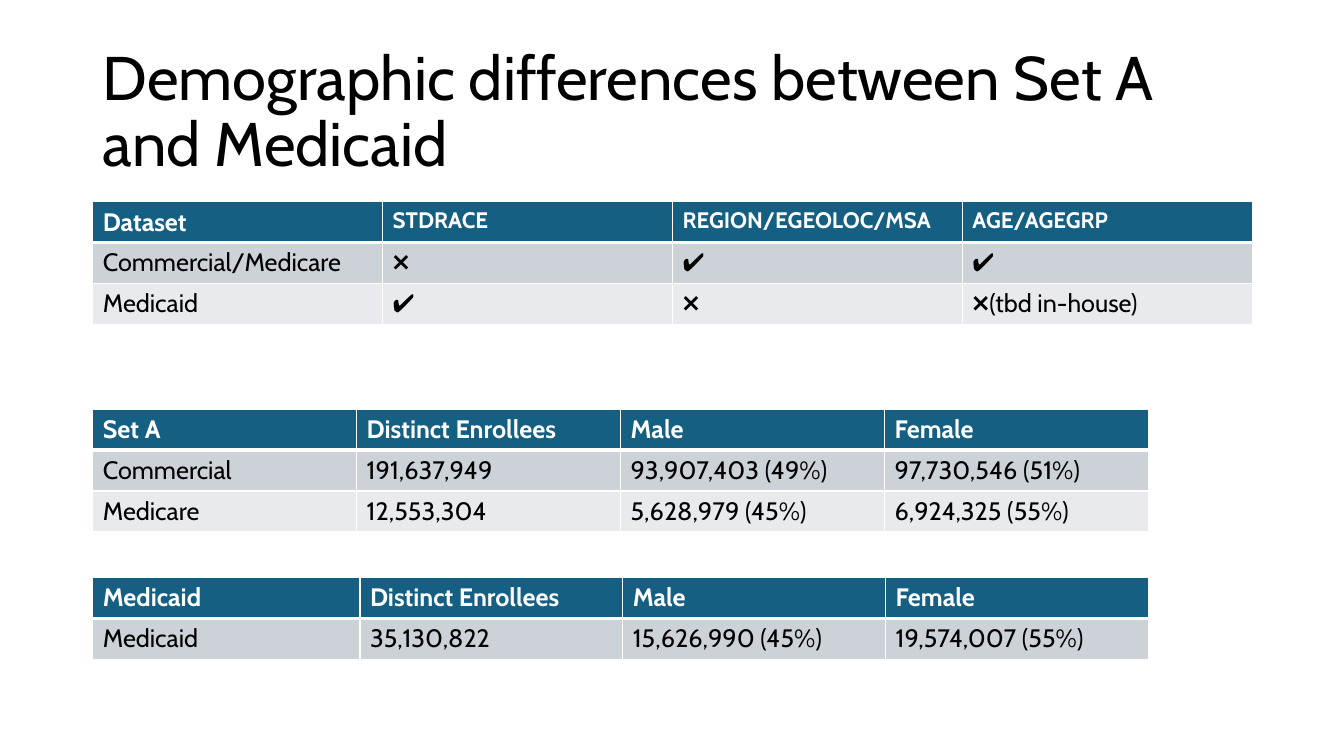
from lxml.etree import SubElement
from pptx import Presentation
from pptx.dml.color import RGBColor
from pptx.enum.text import MSO_ANCHOR, MSO_AUTO_SIZE, PP_ALIGN
from pptx.oxml.ns import qn
from pptx.util import Inches, Pt

FONT = "Cabin"
COLORS = {
    "header": "156082",
    "odd_row": "CCD2D8",
    "even_row": "E8EAED",
    "rule": "FFFFFF",
    "header_text": "FFFFFF",
    "text": "000000",
}
LEFT = 0.92
ROW_HEIGHT = 0.405

AVAILABILITY = [
    ["Dataset", "STDRACE", "REGION/EGEOLOC/MSA", "AGE/AGEGRP"],
    ["Commercial/Medicare", "❌", "✔️", "✔️"],
    ["Medicaid", "✔️", "❌", "❌(tbd in-house)"],
]
SET_A = [
    ["Set A", "Distinct Enrollees", "Male", "Female"],
    ["Commercial", "191,637,949", "93,907,403 (49%)", "97,730,546 (51%)"],
    ["Medicare", "12,553,304", "5,628,979 (45%)", "6,924,325 (55%)"],
]
MEDICAID = [
    ["Medicaid", "Distinct Enrollees", "Male", "Female"],
    ["Medicaid", "35,130,822", "15,626,990 (45%)", "19,574,007 (55%)"],
]


def color(name):
    return RGBColor.from_string(COLORS[name])


def style_paragraph(para, size, color_name, bold=False):
    para.font.name = FONT
    para.font.size = Pt(size)
    para.font.bold = bold
    para.font.color.rgb = color(color_name)


def add_title(page, text, box):
    title = page.shapes.title
    title.left, title.top, title.width, title.height = map(Inches, box)
    frame = title.text_frame
    frame.text = text
    frame.word_wrap = True
    frame.auto_size = MSO_AUTO_SIZE.NONE
    frame.vertical_anchor = MSO_ANCHOR.MIDDLE
    para = frame.paragraphs[0]
    para.alignment = PP_ALIGN.LEFT
    para.line_spacing = 0.9
    style_paragraph(para, 44, "text")


def set_borders(cell, top, bottom):
    """Rule the cell in white; top and bottom are widths in points."""
    properties = cell._tc.get_or_add_tcPr()
    widths = {"a:lnL": 1, "a:lnR": 1, "a:lnT": top, "a:lnB": bottom}
    for index, (tag, width) in enumerate(widths.items()):
        line = SubElement(properties, qn(tag), w=str(Pt(width)))
        fill = SubElement(line, qn("a:solidFill"))
        SubElement(fill, qn("a:srgbClr"), val=COLORS["rule"])
        properties.insert(index, line)


def add_data_table(page, rows, box, first_width=None, label_size=18):
    """Fill the box; label_size applies to the headings after the first."""
    left, top, width, height = map(Inches, box)
    column_count = len(rows[0])
    table = page.shapes.add_table(
        len(rows), column_count, left, top, width, height).table
    if first_width:
        table.columns[0].width = Inches(first_width)
        rest = (width - Inches(first_width)) // (column_count - 1)
        for index in range(1, column_count):
            table.columns[index].width = rest

    for row_index, row in enumerate(rows):
        is_header = row_index == 0
        band = "odd_row" if row_index % 2 else "even_row"
        for column_index, text in enumerate(row):
            cell = table.cell(row_index, column_index)
            cell.text = text
            cell.fill.solid()
            cell.fill.fore_color.rgb = color("header" if is_header else band)
            set_borders(cell, top=3 if row_index == 1 else 1,
                        bottom=3 if is_header else 1)
            size = label_size if is_header and column_index else 18
            style_paragraph(cell.text_frame.paragraphs[0], size,
                            "header_text" if is_header else "text", is_header)


def build_demographics(deck):
    page = deck.slides.add_slide(deck.slide_layouts[5])
    add_title(page, "Demographic differences between Set A and Medicaid",
              (LEFT, 0.4, 11.5, 1.45))
    add_data_table(page, AVAILABILITY,
                   (LEFT, 2, 11.5, ROW_HEIGHT * len(AVAILABILITY)),
                   label_size=16)
    add_data_table(page, SET_A, (LEFT, 4.06, 10.47, ROW_HEIGHT * len(SET_A)))
    add_data_table(page, MEDICAID,
                   (LEFT, 5.73, 10.47, ROW_HEIGHT * len(MEDICAID)),
                   first_width=2.65)


def main():
    deck = Presentation()
    deck.slide_width = Inches(13.33)
    deck.slide_height = Inches(7.5)
    build_demographics(deck)
    deck.save("out.pptx")


if __name__ == "__main__":
    main()
